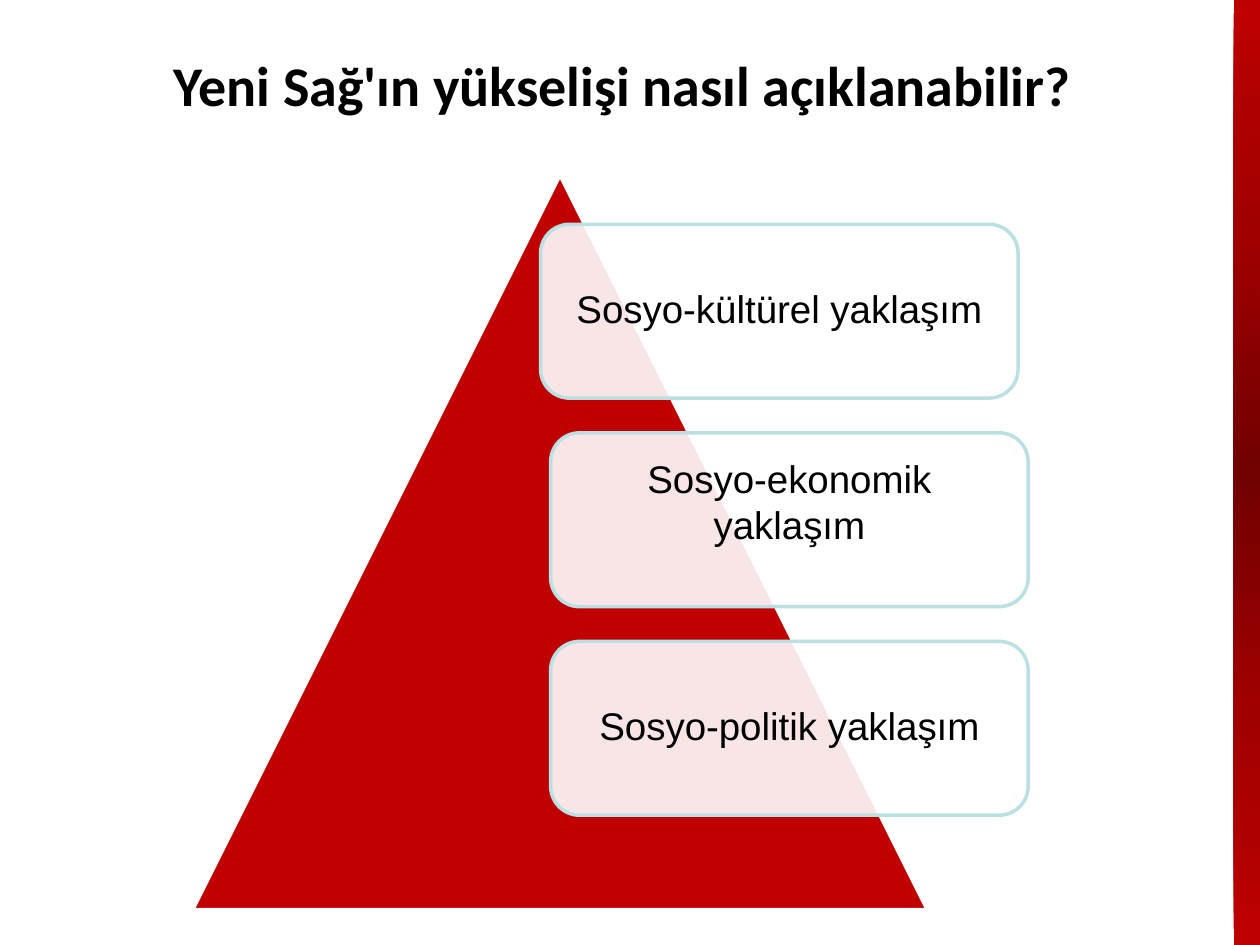
import pptx
import pptx.dml.color
import pptx.enum.shapes
import pptx.enum.text
import pptx.oxml
import pptx.oxml.ns
import pptx.util
from lxml import etree

Inches = pptx.util.Inches
Pt = pptx.util.Pt
RGBColor = pptx.dml.color.RGBColor
Shape = pptx.enum.shapes.MSO_SHAPE
Align = pptx.enum.text.PP_ALIGN
Anchor = pptx.enum.text.MSO_ANCHOR
qn = pptx.oxml.ns.qn

RED = RGBColor(0xC0, 0x00, 0x00)
WHITE = RGBColor(0xFF, 0xFF, 0xFF)
BLACK = RGBColor(0x00, 0x00, 0x00)
PALE_TEAL = RGBColor(0xBB, 0xE0, 0xE3)
BAR_STOPS = (
    (0, RGBColor(0x71, 0x00, 0x00)),
    (50, RGBColor(0xA0, 0x00, 0x00)),
    (100, RGBColor(0xBE, 0x00, 0x00)),
)

APPROACHES = (
    ("Sosyo-kültürel yaklaşım", 0, 0.9, 0),
    ("Sosyo-ekonomik yaklaşım", 0.08, 1.0, 0.3),
    ("Sosyo-politik yaklaşım", 0.08, 0.9, 0),
)


def add_outlined(slide, kind, box, fill, line):
    shape = slide.shapes.add_shape(kind, *(Inches(v) for v in box))
    shape.shadow.inherit = False
    shape.fill.solid()
    shape.fill.fore_color.rgb = fill
    shape.line.color.rgb = line
    shape.line.width = Pt(2)
    return shape


def add_run(paragraph, text, font, size, bold=False):
    run = paragraph.add_run()
    run.text = text
    run.font.name = font
    run.font.size = Pt(size)
    run.font.bold = bold
    run.font.color.rgb = BLACK


def set_insets(frame, left, top, right, bottom):
    frame.margin_left = Inches(left)
    frame.margin_top = Inches(top)
    frame.margin_right = Inches(right)
    frame.margin_bottom = Inches(bottom)


def add_side_bar(slide, box):
    bar = slide.shapes.add_shape(Shape.RECTANGLE, *(Inches(v) for v in box))
    bar.shadow.inherit = False
    bar.line.fill.background()
    stops = "".join(
        f'<a:gs pos="{position * 1000}"><a:srgbClr val="{color}"/></a:gs>'
        for position, color in BAR_STOPS
    )
    gradient = pptx.oxml.parse_xml(
        f'<a:gradFill {pptx.oxml.ns.nsdecls("a")} rotWithShape="1">'
        f"<a:gsLst>{stops}</a:gsLst>"
        '<a:path path="circle">'
        '<a:fillToRect l="50000" t="50000" r="50000" b="50000"/>'
        "</a:path></a:gradFill>"
    )
    bar.element.spPr.find(qn("a:prstGeom")).addnext(gradient)


def add_title(slide, box):
    title = slide.shapes.add_textbox(*(Inches(v) for v in box))
    frame = title.text_frame
    frame.word_wrap = True
    set_insets(frame, 0, 0, 0.1, 0)
    paragraph = frame.paragraphs[0]
    paragraph.line_spacing = 1.07
    paragraph.space_after = Pt(8)
    add_run(paragraph, "Yeni Sağ'ın yükselişi nasıl açıklanabilir?", "Calibri", 32, True)


def add_approach(slide, box, text, line_spacing, lift):
    card = add_outlined(slide, Shape.ROUNDED_RECTANGLE, box, WHITE, PALE_TEAL)
    color = card.element.spPr.find(qn("a:solidFill"))[0]
    etree.SubElement(color, qn("a:alpha")).set("val", "90000")
    frame = card.text_frame
    frame.word_wrap = True
    frame.vertical_anchor = Anchor.MIDDLE
    set_insets(frame, 0.16, 0.16, 0.16, 0.16 + lift)
    paragraph = frame.paragraphs[0]
    paragraph.alignment = Align.CENTER
    paragraph.line_spacing = line_spacing
    add_run(paragraph, text, "Arial", 22)


def add_pyramid(slide, box):
    left, top, width, height = box
    add_outlined(slide, Shape.ISOSCELES_TRIANGLE, box, RED, WHITE)
    card_width, card_height, pitch = 3.79, 1.38, 1.655
    for row, (text, shift, line_spacing, lift) in enumerate(APPROACHES):
        card_box = (left + 2.76 + shift, top + 0.39 + row * pitch, card_width, card_height)
        add_approach(slide, card_box, text, line_spacing, lift)


def main():
    deck = pptx.Presentation()
    deck.slide_width = Inches(10)
    deck.slide_height = Inches(7.5)
    slide = deck.slides.add_slide(deck.slide_layouts[6])
    add_side_bar(slide, (9.79, -0.02, 0.23, 7.52))
    add_pyramid(slide, (1.53, 1.39, 5.83, 5.83))
    add_title(slide, (1.38, 0.36, 8.62, 0.72))
    deck.save("out.pptx")


if __name__ == "__main__":
    main()
